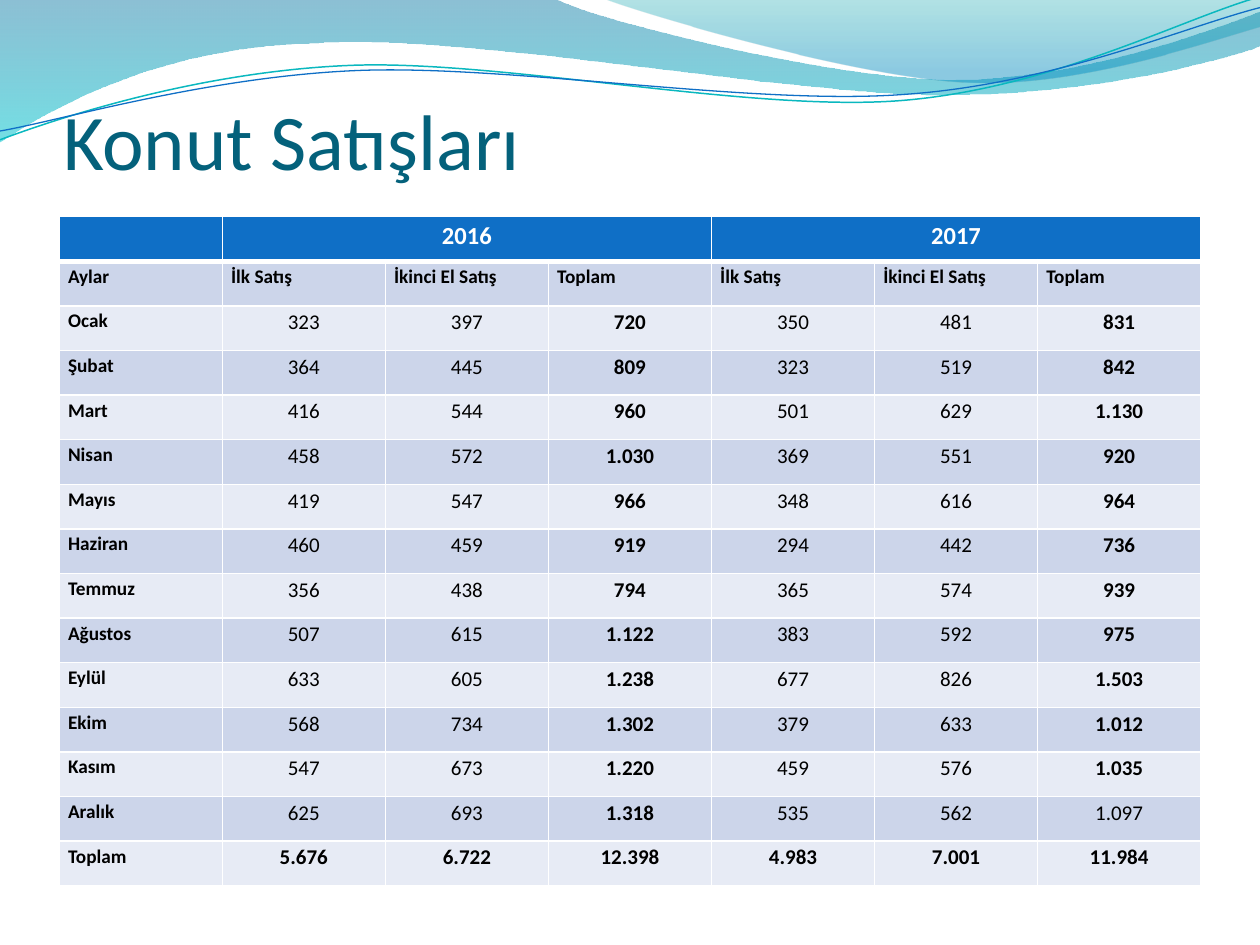
import math

import lxml.etree
import pptx
import pptx.dml.color
import pptx.enum.text
import pptx.oxml.ns
import pptx.util
from pptx.util import Inches

FONT = "Calibri"
BLUE, WHITE, BLACK, TITLE_COLOR = "0F6FC6", "FFFFFF", "000000", "04617B"
BANDS = ["CCD5EA", "E7EBF5"]
CENTER = pptx.enum.text.PP_ALIGN.CENTER
LEFT = pptx.enum.text.PP_ALIGN.LEFT
LINE_ROTATION = 357.3

HEADINGS = ["Aylar"] + ["İlk Satış", "İkinci El Satış", "Toplam"] * 2
SALES = [
    ["Ocak", "323", "397", "720", "350", "481", "831"],
    ["Şubat", "364", "445", "809", "323", "519", "842"],
    ["Mart", "416", "544", "960", "501", "629", "1.130"],
    ["Nisan", "458", "572", "1.030", "369", "551", "920"],
    ["Mayıs", "419", "547", "966", "348", "616", "964"],
    ["Haziran", "460", "459", "919", "294", "442", "736"],
    ["Temmuz", "356", "438", "794", "365", "574", "939"],
    ["Ağustos", "507", "615", "1.122", "383", "592", "975"],
    ["Eylül", "633", "605", "1.238", "677", "826", "1.503"],
    ["Ekim", "568", "734", "1.302", "379", "633", "1.012"],
    ["Kasım", "547", "673", "1.220", "459", "576", "1.035"],
    ["Aralık", "625", "693", "1.318", "535", "562", "1.097"],
    ["Toplam", "5.676", "6.722", "12.398", "4.983", "7.001", "11.984"],
]

LEFT_WAVE = [
    (0, 0), (4.4, -0.01),
    (4.76, 0.17, 6.64, 0.63, 7.58, 0.63), (8.53, 0.63, 9.58, 0.26, 10, 0.09),
    (10.01, 0.36),
    (9.83, 0.44, 8.7, 0.76, 7.46, 0.75), (6.22, 0.75, 3.82, 0.28, 2.57, 0.34),
    (1.29, 0.36, 0.46, 0.83, -0.01, 1.13),
]
RIGHT_WAVE = [
    (4.79, -0.01),
    (5.09, 0.11, 6.82, 0.62, 7.69, 0.65), (8.56, 0.69, 9.61, 0.32, 10, 0.21),
    (10, 0),
]
TEAL_LINE = [
    (0, 1.11),
    (0.48, 0.93, 1.58, 0.57, 2.77, 0.52), (3.95, 0.47, 5.93, 0.89, 7.13, 0.8),
    (8.33, 0.71, 9.38, 0.15, 9.98, -0.02),
]
BLUE_LINE = [
    (0, 1.04),
    (0.47, 0.96, 1.64, 0.61, 2.83, 0.56), (4.03, 0.51, 5.97, 0.84, 7.17, 0.75),
    (8.36, 0.67, 9.41, 0.21, 10, 0.06),
]


def color(value):
    return pptx.dml.color.RGBColor.from_string(value)


def add_element(parent, tag, **attributes):
    return lxml.etree.SubElement(parent, pptx.oxml.ns.qn(tag), attributes)


def local_points(segment, box, rotation):
    left, top, width, height = box
    angle = math.radians(-rotation)
    for x, y in zip(segment[::2], segment[1::2]):
        across, down = x - left - width / 2, y - top - height / 2
        yield (Inches(width / 2 + across * math.cos(angle) - down * math.sin(angle)),
               Inches(height / 2 + across * math.sin(angle) + down * math.cos(angle)))


def add_outline(slide, segments, box, close, rotation=0):
    placed = [list(local_points(segment, box, rotation)) for segment in segments]
    builder = slide.shapes.build_freeform(*placed[0][0])
    builder.add_line_segments([points[-1] for points in placed[1:]], close=close)
    shape = builder.convert_to_shape()
    shape.left, shape.top, shape.width, shape.height = map(Inches, box)
    shape.rotation = rotation
    shape.shadow.inherit = False
    outline = next(shape._element.iter(pptx.oxml.ns.qn("a:path")))
    outline.set("w", str(shape.width))
    outline.set("h", str(shape.height))
    for command, points in zip(list(outline), placed):
        if len(points) == 3:
            command.tag = pptx.oxml.ns.qn("a:cubicBezTo")
        for point in list(command):
            command.remove(point)
        for x, y in points:
            add_element(command, "a:pt", x=str(x), y=str(y))
    return shape


def add_wave(slide, segments, box, stops):
    shape = add_outline(slide, segments, box, True)
    shape.line.fill.background()
    shape.fill.gradient()
    shape.fill.gradient_angle = 270
    for gradient_stop, (position, value, opacity) in zip(shape.fill.gradient_stops, stops):
        gradient_stop.position = position
        gradient_stop.color.rgb = color(value)
    color_elements = shape._element.spPr.iter(pptx.oxml.ns.qn("a:srgbClr"))
    for element, (position, value, opacity) in zip(color_elements, stops):
        add_element(element, "a:alpha", val=str(opacity * 1000))


def add_wave_line(slide, segments, box, value, width):
    shape = add_outline(slide, segments, box, False, LINE_ROTATION)
    shape.fill.background()
    shape.line.color.rgb = color(value)
    shape.line.width = pptx.util.Pt(width)


def set_font(paragraph, size, value, bold=False):
    paragraph.font.name = FONT
    paragraph.font.size = pptx.util.Pt(size)
    paragraph.font.bold = bold
    paragraph.font.color.rgb = color(value)


def format_title(slide, text):
    title = slide.shapes.title
    title.left, title.top, title.width, title.height = map(Inches, (0.5, 0.77, 9, 0.71))
    frame = title.text_frame
    frame.text = text
    frame.vertical_anchor = pptx.enum.text.MSO_ANCHOR.BOTTOM
    frame.auto_size = pptx.enum.text.MSO_AUTO_SIZE.NONE
    frame.margin_left = frame.margin_right = frame.margin_bottom = 0
    frame.margin_top = Inches(0.05)
    frame.paragraphs[0].alignment = LEFT
    set_font(frame.paragraphs[0], 45, TITLE_COLOR)
    slide.shapes._spTree.append(title._element)


def set_borders(cell, bottom_width):
    properties = cell._tc.get_or_add_tcPr()
    for side, width in (("L", 1), ("R", 1), ("T", 1), ("B", bottom_width)):
        line = add_element(properties, "a:ln" + side, w=str(pptx.util.Pt(width)))
        add_element(add_element(line, "a:solidFill"), "a:srgbClr", val=WHITE)


def format_cell(cell, text, fill, size, value, bold, alignment, bottom_width=1):
    set_borders(cell, bottom_width)
    cell.fill.solid()
    cell.fill.fore_color.rgb = color(fill)
    cell.margin_left = cell.margin_right = Inches(0.07)
    cell.margin_top = cell.margin_bottom = 0
    cell.text = text
    paragraph = cell.text_frame.paragraphs[0]
    paragraph.alignment = alignment
    paragraph.line_spacing = 1.15
    set_font(paragraph, size, value, bold)


def add_sales_table(slide):
    rows = [HEADINGS] + SALES
    frame = slide.shapes.add_table(
        len(rows) + 1, len(HEADINGS), Inches(0.47), Inches(1.72), Inches(9.06), Inches(5.31))
    table = frame.table
    years = {1: "2016", 4: "2017"}
    for column in range(len(HEADINGS)):
        format_cell(table.cell(0, column), years.get(column, ""), BLUE, 14, WHITE, True, CENTER, 3)
    for column in years:
        table.cell(0, column).merge(table.cell(0, column + 2))
    for row, texts in enumerate(rows):
        for column, text in enumerate(texts):
            label = row == 0 or column == 0
            total = row == len(rows) - 1 or (column in (3, 6) and text != "1.097")
            format_cell(table.cell(row + 1, column), text, BANDS[row % 2], 11 if label else 12,
                        BLACK, label or total, LEFT if label else CENTER)


def main():
    presentation = pptx.Presentation()
    presentation.slide_width, presentation.slide_height = Inches(10), Inches(7.5)
    slide = presentation.slides.add_slide(presentation.slide_layouts[5])
    add_wave(slide, LEFT_WAVE, (-0.01, -0.01, 10.02, 1.14),
             [(0, "0074A1", 45), (1, "00C6CF", 55)])
    add_wave(slide, RIGHT_WAVE, (4.79, -0.01, 5.21, 0.7),
             [(0, "00A1A9", 30), (0.8, "008BBF", 45)])
    add_wave_line(slide, TEAL_LINE, (-0.02, 0.22, 10.02, 0.71), "0AB8BF", 0.85)
    add_wave_line(slide, BLUE_LINE, (-0.02, 0.3, 10.03, 0.58), BLUE, 0.75)
    format_title(slide, "Konut Satışları")
    add_sales_table(slide)
    presentation.save("out.pptx")


if __name__ == "__main__":
    main()
